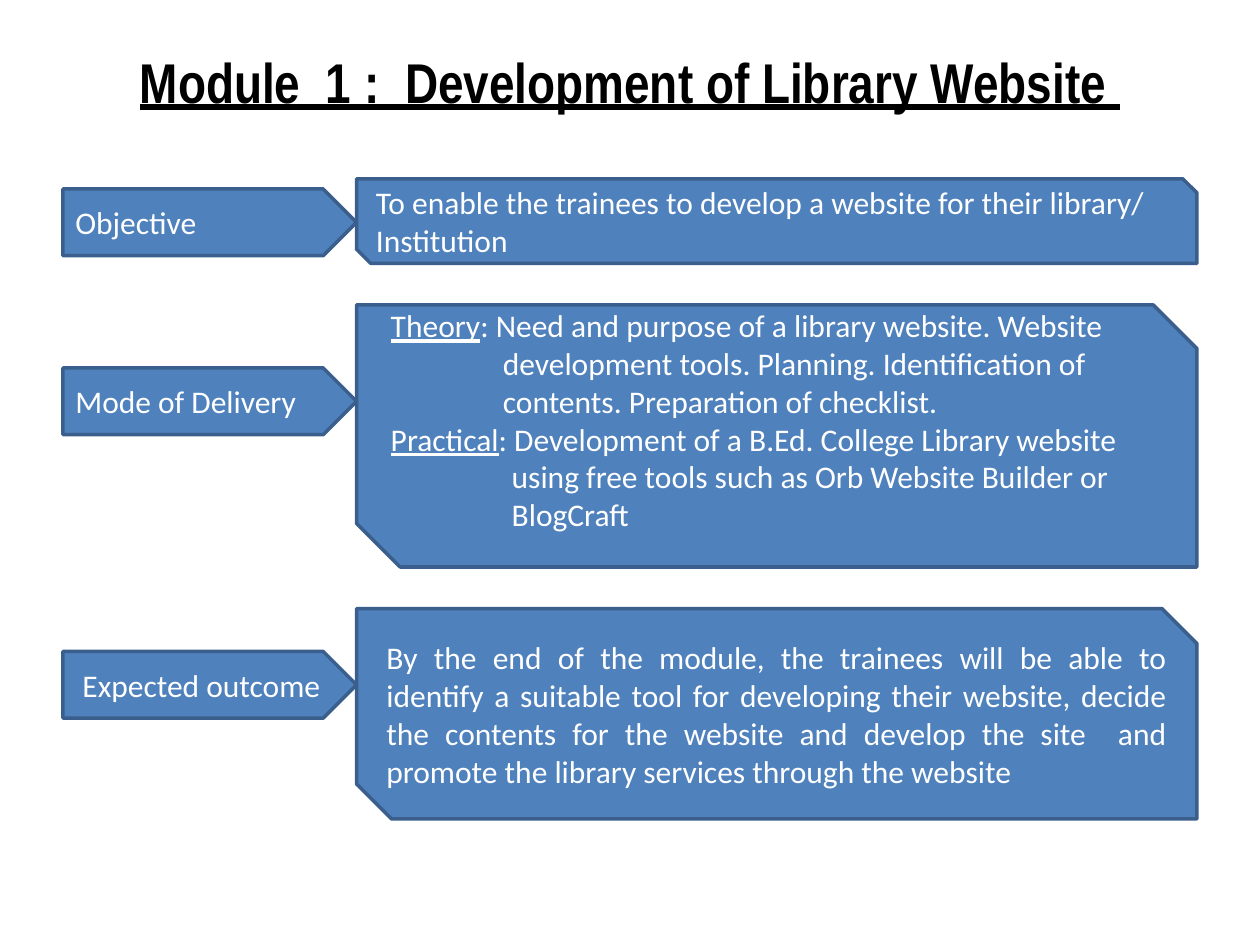
from dataclasses import dataclass

from pptx import Presentation
from pptx.dml.color import RGBColor
from pptx.enum.shapes import MSO_SHAPE
from pptx.enum.text import MSO_ANCHOR, PP_ALIGN
from pptx.util import Inches, Pt

ARROW, PANEL = MSO_SHAPE.PENTAGON, MSO_SHAPE.SNIP_2_DIAG_RECTANGLE
LEFT, CENTER, JUSTIFY = PP_ALIGN.LEFT, PP_ALIGN.CENTER, PP_ALIGN.JUSTIFY
TOP, MIDDLE = MSO_ANCHOR.TOP, MSO_ANCHOR.MIDDLE


@dataclass(frozen=True)
class Theme:
    fill: RGBColor = RGBColor(0x4F, 0x81, 0xBD)
    line: RGBColor = RGBColor(0x3A, 0x5F, 0x8C)
    light: RGBColor = RGBColor(0xFF, 0xFF, 0xFF)
    dark: RGBColor = RGBColor(0, 0, 0)
    title_font: str = "Arial Narrow"
    body_font: str = "Calibri"
    title_size: int = 32
    body_size: int = 18
    line_width: int = 2


THEME = Theme()

# Columns and the height of a label
LABEL_X, LABEL_W, LABEL_H = 0.5, 2.33, 0.53
PANEL_X, PANEL_W = LABEL_X + LABEL_W, 6.67


def add_run(p, text, underline=False):
    r = p.add_run()
    r.text = text
    r.font.name, r.font.size = THEME.body_font, Pt(THEME.body_size)
    r.font.color.rgb = THEME.light
    r.font.underline = underline


def add_hanging(p, term, text, indent):
    """An underlined term, with the following lines indented."""
    pPr = p._p.get_or_add_pPr()
    pPr.set("marL", str(Inches(indent)))
    pPr.set("indent", str(-Inches(indent)))
    p.alignment = LEFT
    add_run(p, term, underline=True)
    add_run(p, text)


def add_box(s, kind, x, y, w, h):
    sp = s.shapes.add_shape(kind, Inches(x), Inches(y), Inches(w), Inches(h))
    sp.shadow.inherit = False
    sp.fill.solid()
    sp.fill.fore_color.rgb = THEME.fill
    sp.line.color.rgb = THEME.line
    sp.line.width = Pt(THEME.line_width)
    tf = sp.text_frame
    tf.word_wrap = True
    tf.vertical_anchor = MIDDLE
    return tf


def add_label(s, y, text, align=LEFT):
    p = add_box(s, ARROW, LABEL_X, y, LABEL_W, LABEL_H).paragraphs[0]
    p.alignment = align
    add_run(p, text)


def add_panel(s, y, h):
    return add_box(s, PANEL, PANEL_X, y, PANEL_W, h)


def add_title(s, text):
    tf = s.shapes.add_textbox(Inches(0.5), Inches(0.33), Inches(9), Inches(6.37)).text_frame
    tf.word_wrap = True
    tf.vertical_anchor = TOP
    p = tf.paragraphs[0]
    p.alignment = CENTER
    p.space_before = Pt(6.4)
    r = p.add_run()
    r.text = text
    r.font.name, r.font.size = THEME.title_font, Pt(THEME.title_size)
    r.font.bold = r.font.underline = True
    r.font.color.rgb = THEME.dark


def main():
    prs = Presentation()
    prs.slide_width, prs.slide_height = Inches(10), Inches(7.5)
    s = prs.slides.add_slide(prs.slide_layouts[6])

    add_title(s, "Module  1 :  Development of Library Website ")

    # Objective
    p = add_panel(s, 1.42, 0.67).paragraphs[0]
    p.alignment = LEFT
    add_run(p, "To enable the trainees to develop a website for their library/ Institution")
    add_label(s, 1.5, "Objective")

    # Mode of delivery; the text sits high in its panel
    add_label(s, 2.92, "Mode of Delivery")
    tf = add_panel(s, 2.42, 2.08)
    tf.margin_top, tf.margin_bottom = Inches(0), Inches(0.26)
    add_hanging(tf.paragraphs[0], "Theory",
                ": Need and purpose of a library website. Website development tools. "
                "Planning. Identification of contents. Preparation of checklist.", 0.89)
    add_hanging(tf.add_paragraph(), "Practical",
                ": Development of a B.Ed. College Library website using free tools "
                "such as Orb Website Builder or BlogCraft", 0.96)

    # Expected outcome
    p = add_panel(s, 4.83, 1.67).paragraphs[0]
    p.alignment = JUSTIFY
    add_run(p, "By the end of the module, the trainees will be able to identify a suitable "
               "tool for developing their website, decide the contents for the website and "
               "develop the site  and promote the library services through the website")
    add_label(s, 5.17, "Expected outcome", CENTER)

    prs.save("out.pptx")


if __name__ == "__main__":
    main()
